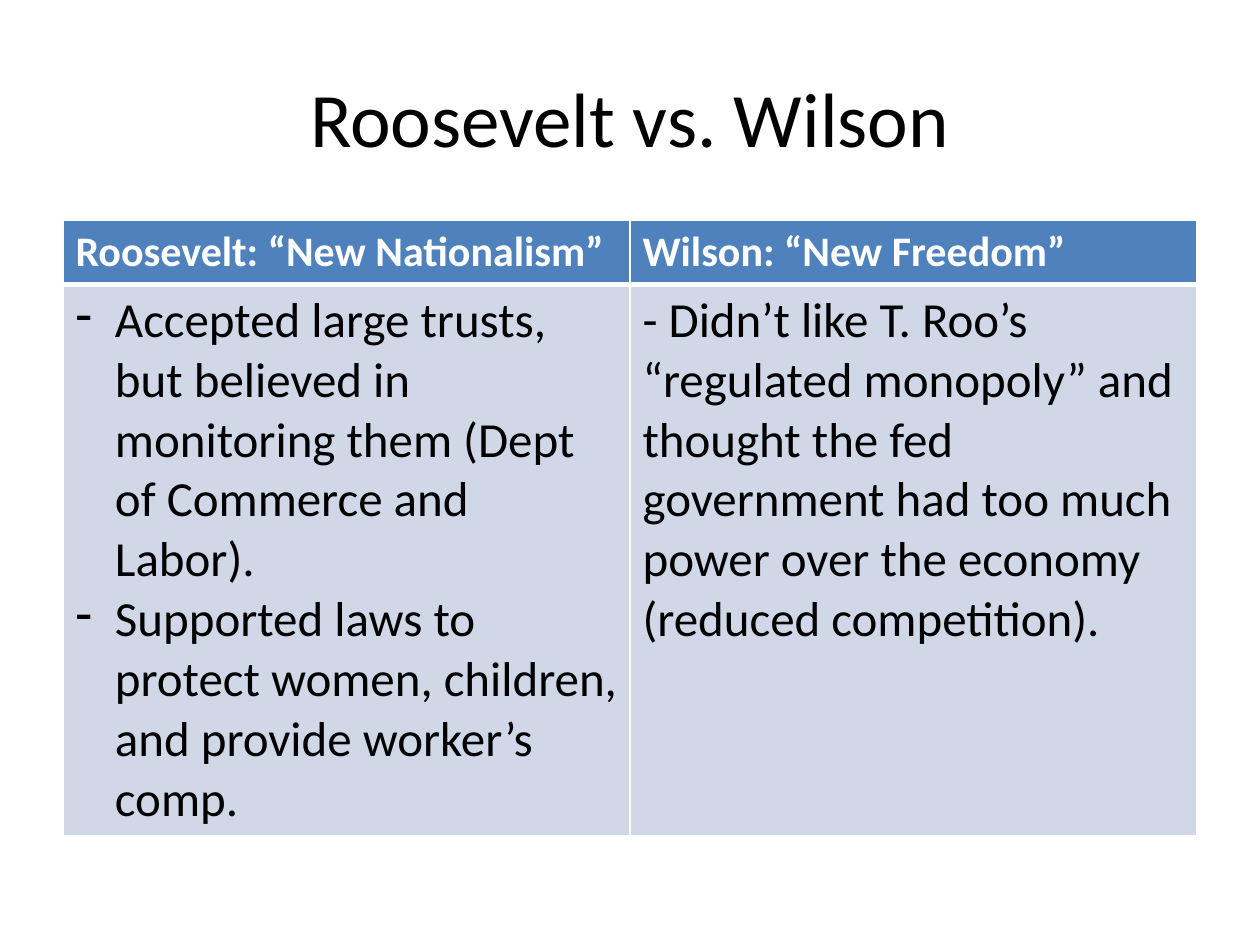
"""Build the slide that compares Roosevelt and Wilson in a two-column table."""
import pptx
import pptx.dml.color
import pptx.enum.text
import pptx.oxml
import pptx.oxml.ns
import pptx.util

Pt = pptx.util.Pt
FONT = "Calibri"
TITLE = "Roosevelt vs. Wilson"
HEADERS = ["Roosevelt: “New Nationalism”", "Wilson: “New Freedom”"]
BODIES = [
    ["Accepted large trusts, but believed in monitoring them (Dept of Commerce and Labor).",
     "Supported laws to protect women, children, and provide worker’s comp."],
    ["- Didn’t like T. Roo’s “regulated monopoly” and thought the fed government "
     "had too much power over the economy (reduced competition)."],
]
BULLETED = [True, False]
LEFT, TOP, WIDTH = 36, 126, 648
ROW_HEIGHTS = [36.5, 314.8]
INDENT = 22.5


def rgb(color):
    return pptx.dml.color.RGBColor.from_string(color)


def element(xml):
    return pptx.oxml.parse_xml(xml.replace(">", f" {pptx.oxml.ns.nsdecls('a')}>", 1))


def style(p, size, color, bold=False):
    for r in p.runs:
        r.font.name, r.font.size, r.font.bold = FONT, Pt(size), bold
        r.font.color.rgb = rgb(color)


def add_bullet(p):
    props = p._p.get_or_add_pPr()
    props.set("marL", str(Pt(INDENT)))
    props.set("indent", str(-Pt(INDENT)))
    props.append(element('<a:buFontTx></a:buFontTx>'))
    props.append(element('<a:buChar char="-"></a:buChar>'))


def add_borders(cell, widths):
    props = cell._tc.get_or_add_tcPr()
    for i, (side, width) in enumerate(widths.items()):
        props.insert(i, element(
            f'<a:ln{side} w="{Pt(width)}"><a:solidFill><a:srgbClr val="FFFFFF"/>'
            f'</a:solidFill></a:ln{side}>'))


def fill_cell(cell, lines, size, color, fill, widths, bold=False, bulleted=False):
    cell.fill.solid()
    cell.fill.fore_color.rgb = rgb(fill)
    add_borders(cell, widths)
    cell.text_frame.text = "\n".join(lines)
    for p in cell.text_frame.paragraphs:
        style(p, size, color, bold)
        if bulleted:
            add_bullet(p)


def main():
    prs = pptx.Presentation()
    prs.slide_width, prs.slide_height = Pt(720), Pt(540)
    s = prs.slides.add_slide(prs.slide_layouts[5])

    title = s.shapes.title
    title.left, title.top, title.width, title.height = Pt(36), Pt(21.6), Pt(648), Pt(90)
    tf = title.text_frame
    tf.text = TITLE
    tf.vertical_anchor = pptx.enum.text.MSO_ANCHOR.MIDDLE
    tf.paragraphs[0].alignment = pptx.enum.text.PP_ALIGN.CENTER
    style(tf.paragraphs[0], 44, "000000")

    table = s.shapes.add_table(len(ROW_HEIGHTS), len(HEADERS), Pt(LEFT), Pt(TOP),
                               Pt(WIDTH), Pt(sum(ROW_HEIGHTS))).table
    for row, height in zip(table.rows, ROW_HEIGHTS):
        row.height = Pt(height)
    head_borders = {"L": 1, "R": 1, "T": 1, "B": 3}
    body_borders = {"L": 1, "R": 1, "T": 3, "B": 1}
    for i, (header, body, bulleted) in enumerate(zip(HEADERS, BODIES, BULLETED)):
        table.columns[i].width = Pt(WIDTH / len(HEADERS))
        fill_cell(table.cell(0, i), [header], 24, "FFFFFF", "4F81BD", head_borders, bold=True)
        fill_cell(table.cell(1, i), body, 28, "000000", "D0D8E8", body_borders,
                  bulleted=bulleted)

    prs.save("out.pptx")


if __name__ == "__main__":
    main()
